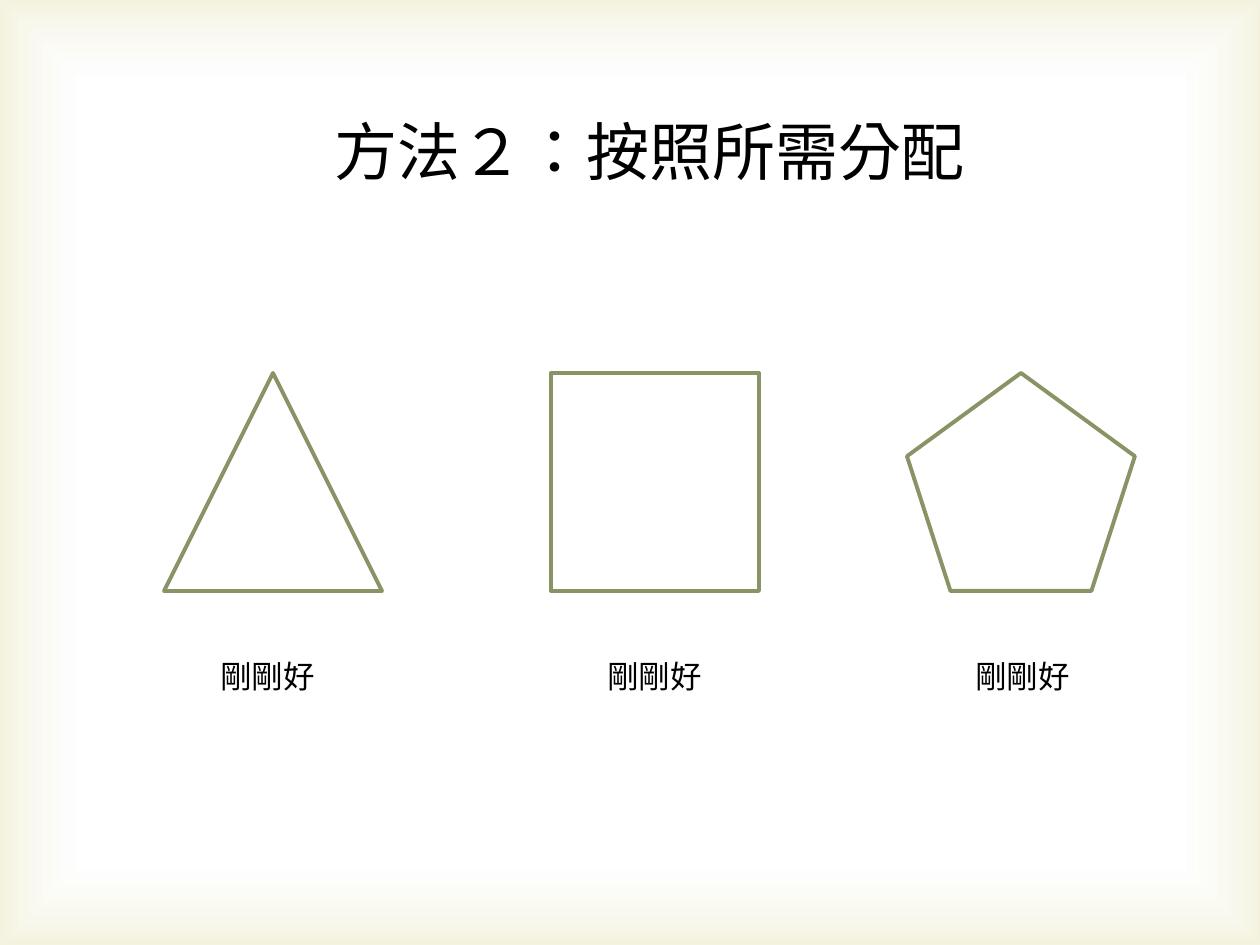
from pptx import Presentation
from pptx.dml.color import RGBColor
from pptx.enum.lang import MSO_LANGUAGE_ID
from pptx.enum.shapes import MSO_SHAPE
from pptx.enum.text import MSO_AUTO_SIZE, PP_ALIGN
from pptx.oxml import parse_xml
from pptx.oxml.ns import nsdecls, qn
from pptx.util import Pt

PX = 914400 // 126
WIDTH, HEIGHT = 1260, 945
FONT = "Cambria"
COLORS = {"paper": "FFFFFF", "edge": "D1CA75", "outline": "889465", "text": "000000"}
RECTANGLE = MSO_SHAPE.RECTANGLE
TRIANGLE = MSO_SHAPE.ISOSCELES_TRIANGLE
PENTAGON = MSO_SHAPE.REGULAR_PENTAGON
LEFT, CENTER = PP_ALIGN.LEFT, PP_ALIGN.CENTER
CHINESE = MSO_LANGUAGE_ID.TRADITIONAL_CHINESE

# Preset shape, left, width, distance from shape to label
FIGURES = [
    (TRIANGLE, 164, 218, 44),
    (RECTANGLE, 551, 208, 44),
    (PENTAGON, 907, 228, 56),
]


def to_emu(*lengths):
    return [length * PX for length in lengths]


def add_plain_shape(page, kind, box):
    shape = page.shapes.add_shape(kind, *to_emu(*box))
    shape.shadow.inherit = False
    shape.fill.background()
    return shape


def add_vignette(page, box):
    """Tint the edges with a translucent gradient that fades to the centre."""
    shape = add_plain_shape(page, RECTANGLE, box)
    shape.line.fill.background()
    stops = "".join(
        f'<a:gs pos="{position * 1000}"><a:srgbClr val="{COLORS[name]}">'
        f'<a:alpha val="{alpha * 1000}"/></a:srgbClr></a:gs>'
        for position, name, alpha in [(83, "paper", 11), (100, "edge", 23)]
    )
    gradient = parse_xml(
        f'<a:gradFill {nsdecls("a")} rotWithShape="1"><a:gsLst>{stops}</a:gsLst>'
        '<a:path path="rect"><a:fillToRect l="50000" t="50000" r="50000" b="50000"/>'
        "</a:path></a:gradFill>"
    )
    properties = shape.fill._xPr
    properties.replace(properties.find(qn("a:noFill")), gradient)


def add_text(page, box, text, size, align=LEFT):
    frame = page.shapes.add_textbox(*to_emu(*box)).text_frame
    frame.word_wrap = True
    frame.auto_size = MSO_AUTO_SIZE.SHAPE_TO_FIT_TEXT
    para = frame.paragraphs[0]
    para.alignment = align
    span = para.add_run()
    span.text = text
    span.font.name = FONT
    span.font.size = Pt(size)
    span.font.language_id = CHINESE
    span.font.color.rgb = RGBColor.from_string(COLORS["text"])


def add_figure(page, kind, box, label_offset):
    left, top, width, height = box
    shape = add_plain_shape(page, kind, box)
    shape.line.color.rgb = RGBColor.from_string(COLORS["outline"])
    shape.line.width = Pt(2.25)
    add_text(page, (left + label_offset, top + height + 60, 134, 50), "剛剛好", 18)


def main():
    deck = Presentation()
    deck.slide_width, deck.slide_height = to_emu(WIDTH, HEIGHT)
    page = deck.slides.add_slide(deck.slide_layouts[6])
    page.background.fill.solid()
    page.background.fill.fore_color.rgb = RGBColor.from_string(COLORS["paper"])
    add_vignette(page, (0, 0, WIDTH, HEIGHT))
    add_text(page, (184, 106, 932, 89), "方法２：按照所需分配", 36, CENTER)
    for kind, left, width, label_offset in FIGURES:
        add_figure(page, kind, (left, 373, width, 218), label_offset)
    deck.save("out.pptx")


if __name__ == "__main__":
    main()
